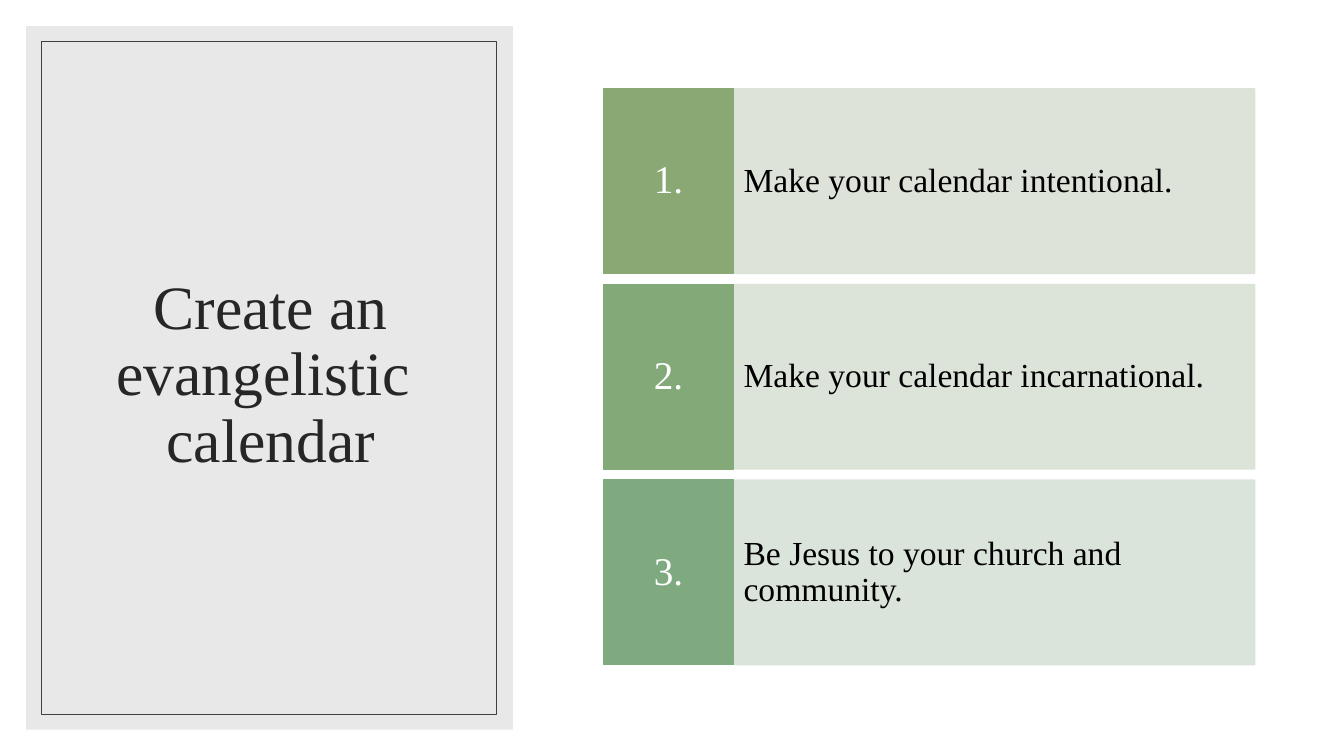
from lxml import etree
from pptx import Presentation
from pptx.dml.color import RGBColor
from pptx.enum.shapes import MSO_SHAPE
from pptx.enum.text import MSO_ANCHOR, PP_ALIGN
from pptx.oxml.ns import qn
from pptx.util import Cm, Pt

RECT = MSO_SHAPE.RECTANGLE
MIDDLE = MSO_ANCHOR.MIDDLE
LEFT, CENTER = PP_ALIGN.LEFT, PP_ALIGN.CENTER

FONT = "Times New Roman"
STEPS = [
    ("Make your calendar intentional.", "89A873", "DAE1D5"),
    ("Make your calendar incarnational.", "83A979", "D9E2D7"),
    ("Be Jesus to your church and community.", "7FAA7F", "D8E2D8"),
]
STEPS_TOP, STEP_HEIGHT, STEP_PITCH = 2.24, 4.65, 4.93
NUMBER_LEFT, NUMBER_WIDTH, STEP_WIDTH = 15.21, 3.28, 13.13


def set_color(fill, color, opacity=100):
    """Make a fill solid in a hex colour with an opacity in percent."""
    fill.solid()
    fill.fore_color.rgb = RGBColor.from_string(color)
    if opacity < 100:
        srgb = fill._xPr.find(qn("a:solidFill")).find(qn("a:srgbClr"))
        etree.SubElement(srgb, qn("a:alpha")).set("val", str(opacity * 1000))


def add_box(s, box, fill=None, line=None, line_width=1, opacity=100):
    """Add a rectangle at box, given as left, top, width, height in cm."""
    sp = s.shapes.add_shape(RECT, *map(Cm, box))
    sp.shadow.inherit = False
    if fill:
        set_color(sp.fill, fill, opacity)
    else:
        sp.fill.background()
    if line:
        set_color(sp.line.fill, line, opacity)
        sp.line.width = Pt(line_width)
    else:
        sp.line.fill.background()
    return sp


def set_text(sp, text, size, color, align, margins):
    """Write one paragraph, vertically centred, with side and end margins in cm."""
    tf = sp.text_frame
    tf.word_wrap = True
    tf.vertical_anchor = MIDDLE
    tf.margin_left = tf.margin_right = Cm(margins[0])
    tf.margin_top = tf.margin_bottom = Cm(margins[1])
    p = tf.paragraphs[0]
    p.text = text
    p.alignment = align
    p.line_spacing = 0.9
    p.font.name = FONT
    p.font.size = Pt(size)
    set_color(p.font.fill, color)


def add_title_panel(s):
    """Add the grey panel with its thin frame and the slide title."""
    add_box(s, (0.66, 0.66, 12.27, 17.73), fill="D9D9D9", opacity=60)
    title = s.shapes.add_textbox(Cm(1.6), Cm(1.55), Cm(10.46), Cm(15.85))
    set_text(title, "Create an evangelistic \vcalendar", 44, "262626",
             CENTER, (0.25, 0.13))
    add_box(s, (1.04, 1.04, 11.46, 16.97), line="404040", line_width=0.5)


def add_step(s, index, text, accent, tint):
    """Add one numbered row: the tinted statement and its number block."""
    top = STEPS_TOP + index * STEP_PITCH
    statement = add_box(
        s, (NUMBER_LEFT + NUMBER_WIDTH, top, STEP_WIDTH, STEP_HEIGHT),
        fill=tint, line=tint, opacity=90)
    set_text(statement, text, 24, "000000", LEFT, (0.25, 1.19))
    number = add_box(s, (NUMBER_LEFT, top, NUMBER_WIDTH, STEP_HEIGHT),
                     fill=accent, line=accent)
    set_text(number, f"{index + 1}.", 28, "FFFFFF", CENTER, (0.18, 0.46))


def main():
    """Build the slide and save it."""
    prs = Presentation()
    prs.slide_width, prs.slide_height = Cm(33.87), Cm(19.05)
    s = prs.slides.add_slide(prs.slide_layouts[6])
    set_color(s.background.fill, "FFFFFF")
    add_title_panel(s)
    for index, step in enumerate(STEPS):
        add_step(s, index, *step)
    prs.save("out.pptx")


if __name__ == "__main__":
    main()
